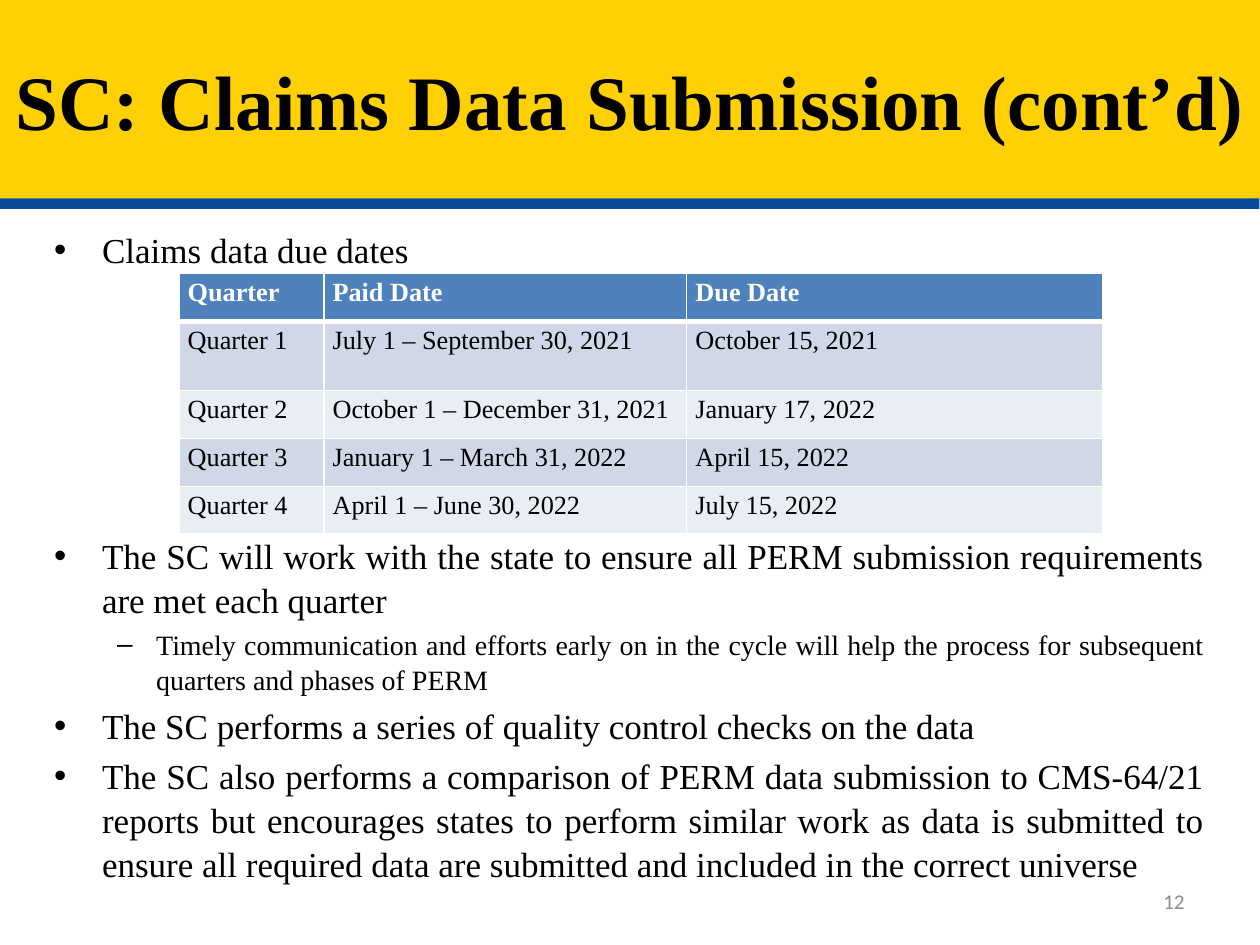
from lxml import etree
from pptx import Presentation, util as u
from pptx.dml.color import RGBColor
from pptx.enum import text
from pptx.oxml import ns

WIDE, HIGH = 10, 7.5
SERIF = "Times New Roman"
BLACK, WHITE = "000000", "FFFFFF"

COLS = [1.15, 2.88, 3.3]
ROWS = [0.38, 0.55, 0.38, 0.38, 0.38]
DATES = [
    ("Quarter", "Paid Date", "Due Date"),
    ("Quarter 1", "July 1 – September 30, 2021", "October 15, 2021"),
    ("Quarter 2", "October 1 – December 31, 2021", "January 17, 2022"),
    ("Quarter 3", "January 1 – March 31, 2022", "April 15, 2022"),
    ("Quarter 4", "April 1 – June 30, 2022", "July 15, 2022"),
]

# level, space before in points, wording
TABLE_GAP = 150
POINTS = [
    (0, 4, "Claims data due dates"),
    (0, TABLE_GAP, "The SC will work with the state to ensure all PERM "
     "submission requirements are met each quarter"),
    (1, 3.2, "Timely communication and efforts early on in the cycle will "
     "help the process for subsequent quarters and phases of PERM"),
    (0, 4, "The SC performs a series of quality control checks on the data"),
    (0, 4, "The SC also performs a comparison of PERM data submission to "
     "CMS-64/21 reports but encourages states to perform similar work as "
     "data is submitted to ensure all required data are submitted and "
     "included in the correct universe"),
]
# per level: size, left margin, hanging indent, bullet
LEVELS = [(20, 0.38, -0.38, "•"), (16, 0.81, -0.31, "–")]


def paint(target, color):
    target.solid()
    target.fore_color.rgb = RGBColor.from_string(color)


def node(parent, tag, **attrs):
    item = etree.SubElement(parent, ns.qn(tag))
    for key, value in attrs.items():
        item.set(key, str(value))
    return item


def place(shape, left, top, width, height):
    """Set the box as shares of the slide's size."""
    shape.left, shape.width = (u.Inches(WIDE * n) for n in (left, width))
    shape.top, shape.height = (u.Inches(HIGH * n) for n in (top, height))


def write(para, words, size, color=BLACK, bold=False, font=SERIF):
    run = para.add_run()
    run.text = words
    run.font.size, run.font.bold, run.font.name = u.Pt(size), bold, font
    paint(run.font.fill, color)


def inset(box):
    box.margin_left = box.margin_right = u.Inches(0.07)
    box.margin_top = box.margin_bottom = u.Inches(0.04)


def banner(shape, words):
    place(shape, 0, 0, 1, 0.21)
    paint(shape.fill, "FFD004")
    # Hard shadow that forms the blue rule
    effect = node(shape._element.spPr, "a:effectLst")
    shade = node(effect, "a:outerShdw", blurRad=0, dist=u.Pt(6),
                 dir=94 * 60000, algn="ctr", rotWithShape=0)
    node(shade, "a:srgbClr", val="084A9C")
    frame = shape.text_frame
    inset(frame)
    frame.auto_size = text.MSO_AUTO_SIZE.NONE
    frame.vertical_anchor = text.MSO_ANCHOR.MIDDLE
    para = frame.paragraphs[0]
    para.alignment = text.PP_ALIGN.CENTER
    write(para, words, 44, bold=True)


def bullets(shape, items):
    place(shape, 0.033, 0.2333, 0.933, 0.71)
    frame = shape.text_frame
    frame.auto_size = text.MSO_AUTO_SIZE.NONE
    for i, (level, gap, words) in enumerate(items):
        size, left, hang, mark = LEVELS[level]
        para = frame.add_paragraph() if i else frame.paragraphs[0]
        para.level = level
        para.alignment = text.PP_ALIGN.JUSTIFY if i else text.PP_ALIGN.LEFT
        para.space_before = u.Pt(gap)
        para.line_spacing = 1.04
        props = para._p.get_or_add_pPr()
        props.set("marL", str(u.Inches(left)))
        props.set("indent", str(u.Inches(hang)))
        node(node(props, "a:buClr"), "a:srgbClr", val=BLACK)
        node(props, "a:buFont", typeface="Arial")
        node(props, "a:buChar", char=mark)
        write(para, words, size)


def edges(cell, bottom):
    """Draw white cell borders; only the bottom width varies."""
    props = cell._tc.get_or_add_tcPr()
    for side in "LRTB":
        width = bottom if side == "B" else 1
        line = node(props, f"a:ln{side}", w=u.Pt(width))
        node(node(line, "a:solidFill"), "a:srgbClr", val=WHITE)


def grid(slide, rows):
    frame = slide.shapes.add_table(
        len(ROWS), len(COLS), u.Inches(1.42), u.Inches(2.17),
        u.Inches(sum(COLS)), u.Inches(sum(ROWS)))
    table = frame.table
    for col, width in zip(table.columns, COLS):
        col.width = u.Inches(width)
    for r, (row, high) in enumerate(zip(rows, ROWS)):
        table.rows[r].height = u.Inches(high)
        head = r == 0
        fill = "4F81BD" if head else ("E9EDF4", "D0D8E8")[r % 2]
        for c, words in enumerate(row):
            cell = table.cell(r, c)
            inset(cell)
            edges(cell, 3 if head else 1)
            paint(cell.fill, fill)
            write(cell.text_frame.paragraphs[0], words, 15,
                  WHITE if head else BLACK, head)


def number(slide, words):
    box = slide.shapes.add_textbox(0, 0, 0, 0)
    place(box, 0.717, 0.927, 0.233, 0.053)
    frame = box.text_frame
    frame.word_wrap = True
    frame.vertical_anchor = text.MSO_ANCHOR.MIDDLE
    para = frame.paragraphs[0]
    para.alignment = text.PP_ALIGN.RIGHT
    write(para, words, 12, "8C8C8C", font="Calibri")


def main():
    deck = Presentation()
    deck.slide_width, deck.slide_height = u.Inches(WIDE), u.Inches(HIGH)
    slide = deck.slides.add_slide(deck.slide_layouts[1])
    banner(slide.shapes.title, "SC: Claims Data Submission (cont’d)")
    bullets(slide.placeholders[1], POINTS)
    grid(slide, DATES)
    number(slide, "12")
    deck.save("out.pptx")


if __name__ == "__main__":
    main()
